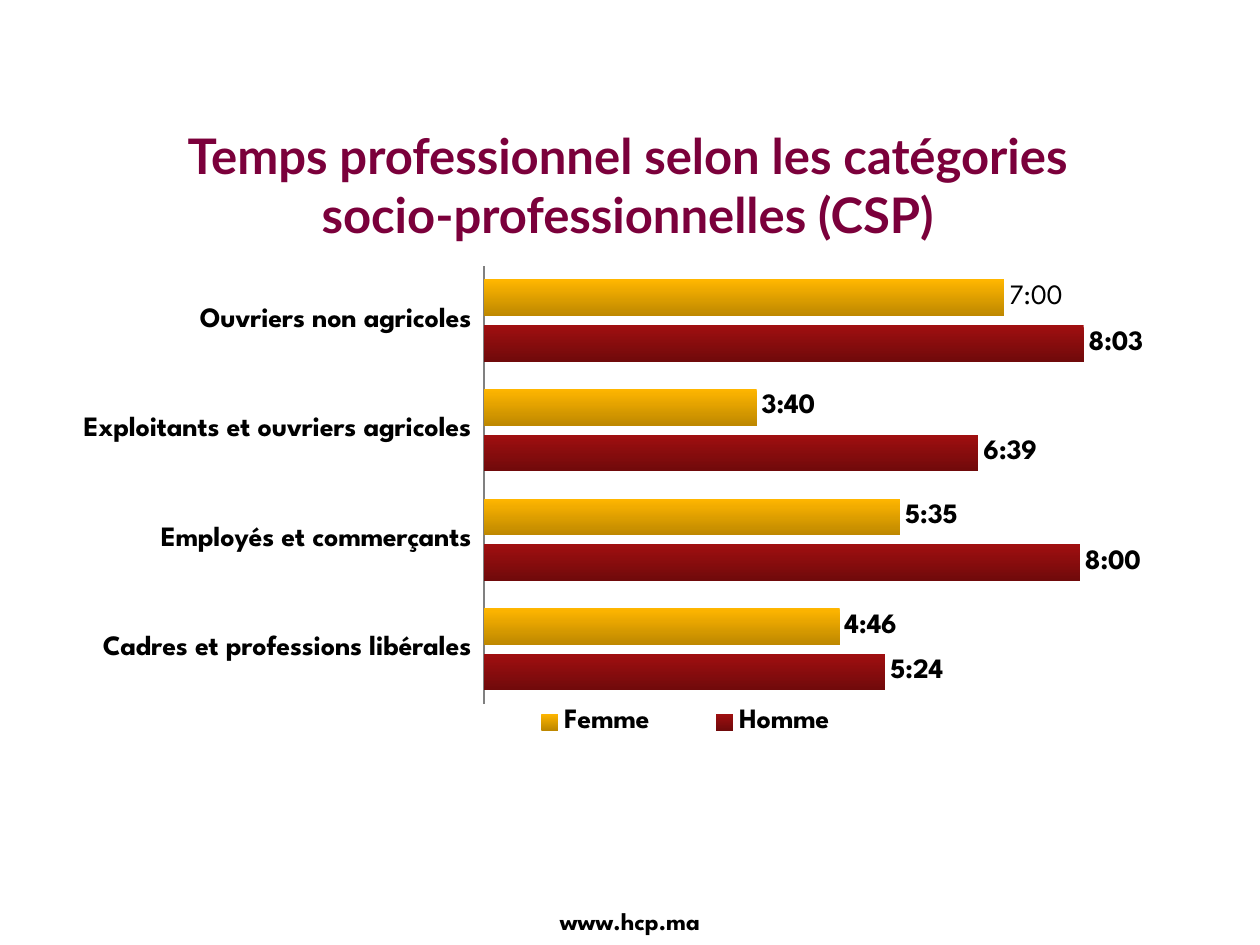
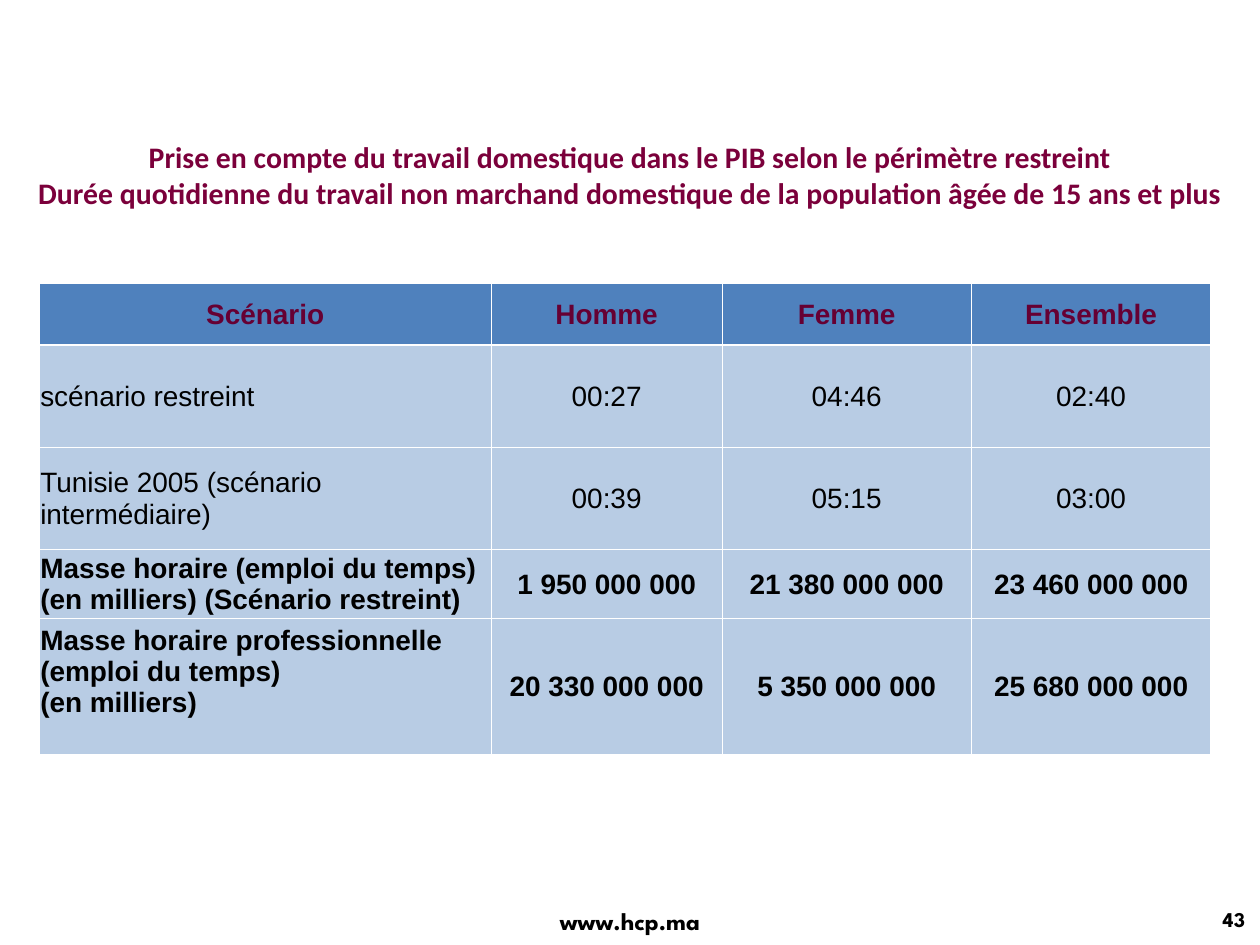
from lxml import etree
from pptx import Presentation
from pptx.chart.data import CategoryChartData
from pptx.dml.color import RGBColor
from pptx.enum.chart import XL_CHART_TYPE, XL_LABEL_POSITION, XL_LEGEND_POSITION, XL_TICK_LABEL_POSITION, XL_TICK_MARK
from pptx.enum.text import MSO_ANCHOR, PP_ALIGN
from pptx.oxml.ns import qn
from pptx.util import Inches, Pt

SLIDE_WIDTH, SLIDE_HEIGHT = Inches(10), Inches(7.5)
COLUMNS, ROWS = 100, 75
LEFT, CENTER, RIGHT = PP_ALIGN.LEFT, PP_ALIGN.CENTER, PP_ALIGN.RIGHT
TOP, MIDDLE = MSO_ANCHOR.TOP, MSO_ANCHOR.MIDDLE
BAR_CLUSTERED = XL_CHART_TYPE.BAR_CLUSTERED
LEGEND_BOTTOM = XL_LEGEND_POSITION.BOTTOM
OUTSIDE_END = XL_LABEL_POSITION.OUTSIDE_END
LABELS_LOW = XL_TICK_LABEL_POSITION.LOW
NO_TICKS = XL_TICK_MARK.NONE

COLORS = {
    "title": "7B003B", "text": "000000", "white": "FFFFFF", "axis": "808080",
    "header": "4F81BD", "header text": "660033", "body": "B8CCE4",
    "Homme": ("A00F10", "700A0B"), "Femme": ("FFB600", "BE8800"),
}
BODY_FONT, TITLE_FONT, SUBTITLE_FONT, TABLE_FONT = "League Spartan", "Lato", "Calibri", "Arial"
TIME_FORMAT = "h:mm;@"

CATEGORIES = ["Cadres et professions libérales", "Employés et commerçants",
              "Exploitants et ouvriers agricoles", "Ouvriers non agricoles"]
WORK_TIMES = {"Homme": ["5:24", "8:01", "6:39", "8:04"],
              "Femme": ["4:47", "5:36", "3:40", "7:00"]}

TABLE_COLUMNS = [35.9, 18.3, 19.8, 19]
TABLE_ROWS = [4.9, 8.1, 8.1, 5.5, 10.8]
TABLE_TEXT = [
    ["Scénario", "Homme", "Femme", "Ensemble"],
    ["scénario restreint", "00:27", "04:46", "02:40"],
    ["Tunisie 2005 (scénario intermédiaire)", "00:39", "05:15", "03:00"],
    ["Masse horaire (emploi du temps)\n(en milliers) (Scénario restreint)",
     "1 950 000 000", "21 380 000 000", "23 460 000 000"],
    ["Masse horaire professionnelle (emploi du temps)\n(en milliers)",
     "20 330 000 000", "5 350 000 000", "25 680 000 000"],
]
BOLD_ROWS = {0, 3, 4}


def rgb(name):
    return RGBColor.from_string(COLORS[name])


def across(columns):
    return round(SLIDE_WIDTH * columns / COLUMNS)


def down(rows):
    return round(SLIDE_HEIGHT * rows / ROWS)


def area(left, top, width, height):
    return across(left), down(top), across(width), down(height)


def style_font(font, name, size, color="text", bold=True):
    font.name, font.size, font.bold = name, Pt(size), bold
    font.color.rgb = rgb(color)


def write(text_frame, text, alignment, **font_style):
    text_frame.text = text
    text_frame.word_wrap = True
    for paragraph in text_frame.paragraphs:
        paragraph.alignment = alignment
        for run in paragraph.runs:
            style_font(run.font, **font_style)


def add_text(slide, place, text, alignment=CENTER, **font_style):
    text_frame = slide.shapes.add_textbox(*area(*place)).text_frame
    text_frame.vertical_anchor = MIDDLE
    write(text_frame, text, alignment, **font_style)


def add_title(slide, place, text, font, size):
    add_text(slide, place, text, name=font, size=size, color="title")


def add_slide(presentation):
    """Add a blank slide with the shared web address at its foot."""
    slide = presentation.slides.add_slide(presentation.slide_layouts[6])
    add_text(slide, (38.2, 71.4, 23.6, 3.3), "www.hcp.ma", name=BODY_FONT, size=14)
    return slide


def day_share(time):
    hours, minutes = map(int, time.split(":"))
    return round((hours * 60 + minutes) / 1440, 4)


def set_layout(part, inner=False, **shares):
    """Fix a plot area or legend at shares of the chart's size."""
    for old in part.findall(qn("c:layout")):
        part.remove(old)
    layout = etree.Element(qn("c:layout"))
    manual = etree.SubElement(layout, qn("c:manualLayout"))
    settings = {"layoutTarget": "inner"} if inner else {}
    settings |= {"xMode": "edge", "yMode": "edge"} | shares
    for tag, value in settings.items():
        etree.SubElement(manual, qn(f"c:{tag}")).set("val", str(value))
    part.insert(0 if inner else 1, layout)


def style_series(series):
    fill = series.format.fill
    fill.gradient()
    fill.gradient_angle = 270
    for stop, color in zip(fill.gradient_stops, COLORS[series.name]):
        stop.color.rgb = RGBColor.from_string(color)
    labels = series.data_labels
    labels.show_value = True
    labels.position = OUTSIDE_END
    labels.number_format, labels.number_format_is_linked = TIME_FORMAT, False
    style_font(labels.font, BODY_FONT, 16)


def add_time_chart(slide, place):
    data = CategoryChartData(number_format=TIME_FORMAT)
    data.categories = CATEGORIES
    for name, times in WORK_TIMES.items():
        data.add_series(name, [day_share(time) for time in times])
    chart = slide.shapes.add_chart(BAR_CLUSTERED, *area(*place), data).chart
    chart.has_title = False
    style_font(chart.font, BODY_FONT, 16)

    plot = chart.plots[0]
    plot.gap_width, plot.overlap, plot.vary_by_categories = 75, -25, False
    for series in plot.series:
        style_series(series)
    last_label = plot.series[1].points[3].data_label
    write(last_label.text_frame, WORK_TIMES["Femme"][3], CENTER,
          name=BODY_FONT, size=16, bold=False)
    last_label.position = OUTSIDE_END

    value_axis = chart.value_axis
    value_axis.visible = value_axis.has_major_gridlines = False
    value_axis.minimum_scale, value_axis.maximum_scale = 0, 0.4
    category_axis = chart.category_axis
    category_axis.major_tick_mark = NO_TICKS
    category_axis.tick_label_position = LABELS_LOW
    category_axis.format.line.color.rgb = rgb("axis")

    chart.has_legend = True
    chart.legend.position = LEGEND_BOTTOM
    chart.legend.include_in_layout = False
    plot_area = chart._chartSpace.chart.plotArea
    set_layout(plot_area, inner=True, x=0.36, y=0.02, w=0.62, h=0.87)
    set_layout(chart.legend._element, x=0.36, y=0.89, w=0.35, h=0.07)


def set_border(cell, side, width):
    line = etree.Element(qn(f"a:{side}"), w=str(Pt(width)))
    fill = etree.SubElement(line, qn("a:solidFill"))
    etree.SubElement(fill, qn("a:srgbClr"), val=COLORS["white"])
    return line


def style_cell(cell, row, column):
    is_header = row == 0
    cell.fill.solid()
    cell.fill.fore_color.rgb = rgb("header" if is_header else "body")
    cell.margin_left = cell.margin_right = cell.margin_top = Inches(0.01)
    cell.margin_bottom = 0
    cell.vertical_anchor = MIDDLE
    if row == len(TABLE_ROWS) - 1 and column == 0:
        cell.vertical_anchor, cell.margin_top = TOP, Inches(0.05)
    widths = {"lnL": 0.5, "lnR": 0.5, "lnT": 1.5 if row == 1 else 0.5,
              "lnB": 1.5 if is_header else 0.5}
    properties = cell._tc.get_or_add_tcPr()
    for index, (side, width) in enumerate(widths.items()):
        properties.insert(index, set_border(cell, side, width))


def add_scenario_table(slide, left, top):
    place = area(left, top, sum(TABLE_COLUMNS), sum(TABLE_ROWS))
    table = slide.shapes.add_table(len(TABLE_ROWS), len(TABLE_COLUMNS), *place).table
    table.first_row = table.horz_banding = False
    for column, width in zip(table.columns, TABLE_COLUMNS):
        column.width = across(width)
    for row, height in zip(table.rows, TABLE_ROWS):
        row.height = down(height)
    for row, texts in enumerate(TABLE_TEXT):
        for column, text in enumerate(texts):
            cell = table.cell(row, column)
            write(cell.text_frame, text, LEFT if row and column == 0 else CENTER,
                  name=TABLE_FONT, size=16, bold=row in BOLD_ROWS,
                  color="text" if row else "header text")
            style_cell(cell, row, column)


def build_work_time_slide(presentation):
    slide = add_slide(presentation)
    add_title(slide, (10.2, 8.4, 79.2, 12.5),
              "Temps professionnel selon les catégories socio-professionnelles (CSP)",
              TITLE_FONT, 28)
    add_time_chart(slide, (5.5, 20.3, 91.4, 40))


def build_scenario_slide(presentation):
    slide = add_slide(presentation)
    add_scenario_table(slide, 3.1, 22.5)
    add_title(slide, (1.2, 10.5, 97.6, 6.7),
              "Prise en compte du travail domestique dans le PIB selon le périmètre restreint\n"
              "Durée quotidienne du travail non marchand domestique de la population "
              "âgée de 15 ans et plus", SUBTITLE_FONT, 17)
    add_text(slide, (84.6, 71.2, 15.2, 3.5), "43", RIGHT, name=BODY_FONT, size=12)


def main():
    presentation = Presentation()
    presentation.slide_width, presentation.slide_height = SLIDE_WIDTH, SLIDE_HEIGHT
    build_work_time_slide(presentation)
    build_scenario_slide(presentation)
    presentation.save("out.pptx")


if __name__ == "__main__":
    main()
